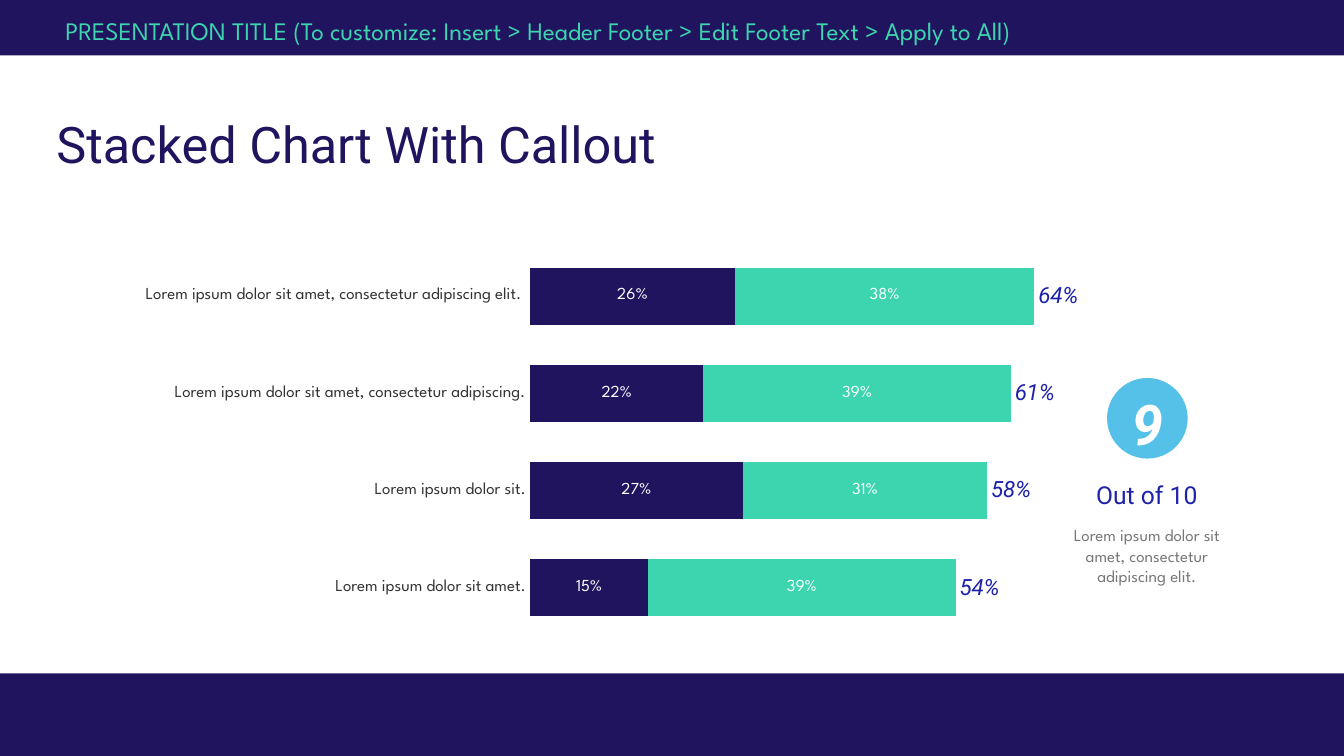
from copy import deepcopy

from lxml import etree
from pptx import Presentation
from pptx import util as u
from pptx.chart.data import CategoryChartData
from pptx.dml.color import RGBColor
from pptx.enum import chart as ch, shapes, text
from pptx.oxml.ns import qn

NAVY = RGBColor(0x20, 0x14, 0x5E)
MINT = RGBColor(0x3C, 0xD5, 0xAF)
BLUE = RGBColor(0x1E, 0x22, 0xAA)
SKY = RGBColor(0x55, 0xC1, 0xE9)
WHITE = RGBColor(0xFF, 0xFF, 0xFF)
GREY = RGBColor(0x77, 0x77, 0x77)
DARK = RGBColor(0x33, 0x33, 0x33)
HEAD, BODY = "Roboto", "League Spartan"
CENTER, LEFT = text.PP_ALIGN.CENTER, text.PP_ALIGN.LEFT
TOP, MIDDLE = text.MSO_ANCHOR.TOP, text.MSO_ANCHOR.MIDDLE


class Deck:
    """Slide builder with one method for each kind of element."""

    def __init__(self):
        self.prs = Presentation()
        self.prs.slide_width, self.prs.slide_height = u.Inches(13.33), u.Inches(7.5)
        self.s = self.prs.slides.add_slide(self.prs.slide_layouts[5])

    def font(self, font, name, size, color, bold=False, italic=False):
        font.name, font.size, font.color.rgb = name, u.Pt(size), color
        font.bold, font.italic = bold, italic

    def add_words(self, sp, words, style, align=CENTER, anchor=TOP, inset=(0, 0), spacing=None):
        tf = sp.text_frame
        tf.word_wrap, tf.auto_size = True, text.MSO_AUTO_SIZE.NONE
        tf.vertical_anchor = anchor
        tf.margin_left = tf.margin_right = u.Inches(inset[0])
        tf.margin_top, tf.margin_bottom = u.Inches(inset[1]), 0
        p = tf.paragraphs[0]
        p.alignment, p.line_spacing = align, spacing
        r = p.add_run()
        r.text = words
        self.font(r.font, *style)

    def title(self, box, words, style):
        sp = self.s.shapes.title
        sp.left, sp.top, sp.width, sp.height = map(u.Inches, box)
        self.add_words(sp, words, style, LEFT, spacing=0.9)

    def text(self, box, words, style, **layout):
        self.add_words(self.s.shapes.add_textbox(*map(u.Inches, box)), words, style, **layout)

    def shape(self, kind, box, color):
        sp = self.s.shapes.add_shape(kind, *map(u.Inches, box))
        sp.shadow.inherit = False
        sp.fill.solid()
        sp.fill.fore_color.rgb = color
        sp.line.fill.background()
        return sp

    def chart(self, box, cats, parts, totals, top):
        data = CategoryChartData(number_format="0%")
        data.categories = cats
        for i, values in enumerate(parts + [totals], 1):
            data.add_series(f"Series {i}", values)
        chart = self.s.shapes.add_chart(
            ch.XL_CHART_TYPE.BAR_STACKED, *map(u.Inches, box), data).chart
        chart.has_legend = chart.has_title = False
        self.font(chart.font, BODY, 16, DARK)
        cat, val = chart.category_axis, chart.value_axis
        cat.major_tick_mark = ch.XL_TICK_MARK.NONE
        cat.format.line.fill.background()
        self.font(cat.tick_labels.font, BODY, 12, DARK)
        val.minimum_scale, val.maximum_scale = 0, top
        val.has_major_gridlines = val.visible = False
        chart.plots[0].gap_width, chart.plots[0].overlap = 70, 100
        chart.plots[0].vary_by_categories = False
        self.second_axis(chart)
        for series, color in zip(chart.plots[0].series, (NAVY, MINT)):
            series.format.fill.solid()
            series.format.fill.fore_color.rgb = color
            self.labels(series, ch.XL_LABEL_POSITION.CENTER, BODY, 12, WHITE)
        total = chart.plots[1].series[0]
        total.format.fill.background()
        self.labels(total, ch.XL_LABEL_POSITION.OUTSIDE_END, HEAD, 16, BLUE, False, True)
        return chart

    def labels(self, series, position, *style):
        labels = series.data_labels
        labels.show_value = True
        labels.number_format, labels.number_format_is_linked = "0%", False
        self.font(labels.font, *style)
        labels.position = position

    def second_axis(self, chart):
        area = chart.plots[0]._element.getparent()
        stacked = area.find(qn("c:barChart"))
        clustered = deepcopy(stacked)
        stacked.remove(stacked.findall(qn("c:ser"))[-1])
        for ser in clustered.findall(qn("c:ser"))[:-1]:
            clustered.remove(ser)
        clustered.find(qn("c:grouping")).set("val", "clustered")
        clustered.remove(clustered.find(qn("c:overlap")))
        stacked.addnext(clustered)
        axes = [area.find(qn("c:catAx")), area.find(qn("c:valAx"))]
        ids = {a.find(qn("c:axId")).get("val"): str(5001 + i) for i, a in enumerate(axes)}
        copies = [deepcopy(a) for a in axes]
        for node in [clustered] + copies:
            for ref in node.findall(qn("c:axId")) + node.findall(qn("c:crossAx")):
                ref.set("val", ids[ref.get("val")])
        for axis in copies:
            axis.find(qn("c:delete")).set("val", "1")
        copies[1].find(qn("c:crosses")).set("val", "max")
        axes[1].addnext(copies[1])
        axes[1].addnext(copies[0])

    def plot_area(self, chart, box):
        area = chart.plots[0]._element.getparent()
        for old in area.findall(qn("c:layout")):
            area.remove(old)
        layout = etree.Element(qn("c:layout"))
        area.insert(0, layout)
        manual = etree.SubElement(layout, qn("c:manualLayout"))
        fields = [("layoutTarget", "inner"), ("xMode", "edge"), ("yMode", "edge")]
        for tag, value in fields + list(zip("xywh", box)):
            etree.SubElement(manual, qn(f"c:{tag}")).set("val", str(value))


def main():
    d = Deck()
    for top, height in ((0, 0.55), (6.68, 0.82)):
        d.shape(shapes.MSO_SHAPE.RECTANGLE, (0, top, 13.33, height), NAVY)
    d.text((0.55, 0.1, 11.56, 0.4),
           "PRESENTATION TITLE (To customize: Insert > Header Footer > "
           "Edit Footer Text > Apply to All)",
           (BODY, 18, MINT), align=LEFT, inset=(0.1, 0.05))
    d.title((0.56, 1.19, 11.58, 1.09), "Stacked Chart With Callout", (HEAD, 36, NAVY))
    chart = d.chart(
        (0, 2.29, 10.73, 4.19),
        ["Lorem ipsum dolor sit amet.",
         "Lorem ipsum dolor sit.",
         "Lorem ipsum dolor sit amet, consectetur adipiscing.",
         "Lorem ipsum dolor sit amet, consectetur adipiscing elit. "],
        [(0.15, 0.27, 0.22, 0.26), (0.39, 0.31, 0.39, 0.38)],
        (0.54, 0.58, 0.61, 0.64), 0.7)
    d.plot_area(chart, (0.49, 0.04, 0.51, 0.92))
    badge = d.shape(shapes.MSO_SHAPE.OVAL, (10.98, 3.75, 0.8, 0.8), SKY)
    d.add_words(badge, "9", (HEAD, 40, WHITE, True, True), anchor=MIDDLE, inset=(0, 0.1))
    d.text((10.64, 4.61, 1.47, 0.6), "Out of 10", (HEAD, 17.6, BLUE), anchor=MIDDLE)
    d.text((10.45, 5.21, 1.85, 0.61),
           "Lorem ipsum dolor sit amet, consectetur adipiscing elit.", (BODY, 12, GREY))
    d.prs.save("out.pptx")


if __name__ == "__main__":
    main()
